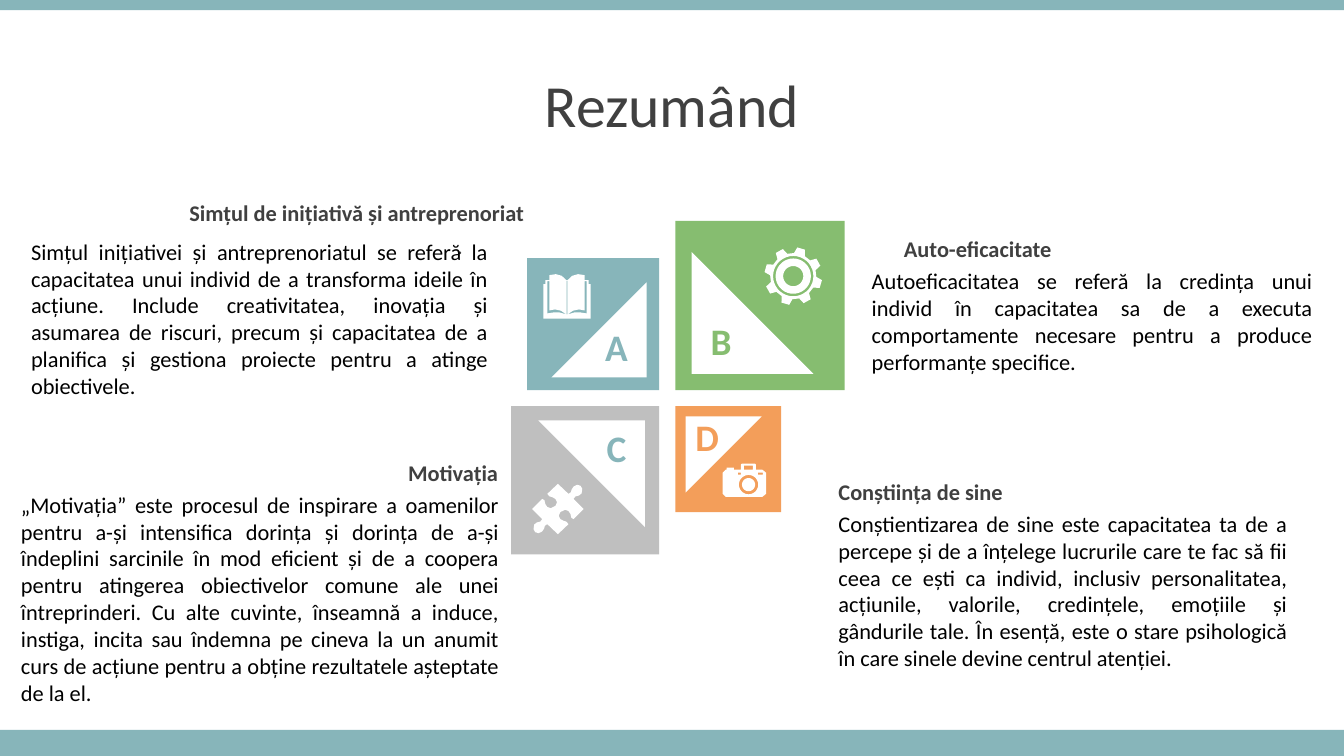
from dataclasses import dataclass
from math import cos, radians, sin

from pptx import Presentation, util as u
from pptx.dml.color import RGBColor
from pptx.enum import shapes, text

# Grid: 160 columns by 90 rows of square cells; every length below is in cells
COLS, ROWS = 160, 90
CELL = u.Emu(76200)
SHAPE, ALIGN = shapes.MSO_SHAPE, text.PP_ALIGN
Point = tuple[float, float]
Contour = list[Point]
Box = tuple[float, float, float, float]


@dataclass(frozen=True)
class Theme:
    font: str = "Calibri"
    teal: str = "87B5BA"
    green: str = "86BD70"
    orange: str = "F39E5A"
    grey: str = "BFBFBF"
    white: str = "FFFFFF"
    black: str = "000000"
    dark: str = "404040"
    title: float = 42.7
    letter: float = 26.7
    body: float = 16


@dataclass(frozen=True)
class Tile:
    letter: str
    size: float
    right: bool
    below: bool
    turn: int
    fill: str
    ink: str
    letter_at: Point


@dataclass(frozen=True)
class Entry:
    heading: str
    heading_box: Box
    align: ALIGN
    body: str
    body_box: Box


@dataclass(frozen=True)
class Icon:
    at: Point
    contours: list[Contour]


T = Theme()
CROSS, GAP = (79.44, 47.4), 1.92
TILES = [
    Tile("A", 15.72, False, False, 270, T.teal, T.teal, (69.84, 38.04)),
    Tile("B", 20.16, True, False, 0, T.green, T.green, (82.32, 37.32)),
    Tile("C", 17.64, False, True, 180, T.grey, T.teal, (69.84, 50.04)),
    Tile("D", 12.6, True, True, 90, T.orange, T.orange, (80.64, 48.72)),
]
ENTRIES = [
    Entry("Simțul de inițiativă și antreprenoriat", (6.6, 23.16, 57, 4.44), ALIGN.RIGHT,
          "Simțul inițiativei și antreprenoriatul se referă la capacitatea unui individ de a "
          "transforma ideile în acțiune. Include creativitatea, inovația și asumarea de riscuri, "
          "precum și capacitatea de a planifica și gestiona proiecte pentru a atinge obiectivele.",
          (2.52, 27.72, 56.76, 20.64)),
    Entry("Auto-eficacitate", (106.44, 27.36, 44.4, 4.44), ALIGN.LEFT,
          "Autoeficacitatea se referă la credința unui individ în capacitatea sa de a executa "
          "comportamente necesare pentru a produce performanțe specifice.",
          (102.6, 31.2, 54.84, 14.16)),
    Entry("Motivația", (16.08, 54.12, 44.4, 4.44), ALIGN.RIGHT,
          "„Motivația” este procesul de inspirare a oamenilor pentru a-și intensifica dorința și "
          "dorința de a-și îndeplini sarcinile în mod eficient și de a coopera pentru atingerea "
          "obiectivelor comune ale unei întreprinderi. Cu alte cuvinte, înseamnă a induce, "
          "instiga, incita sau îndemna pe cineva la un anumit curs de acțiune pentru a obține "
          "rezultatele așteptate de la el.",
          (1.32, 57.84, 59.28, 27.12)),
    Entry("Conștiința de sine", (98.64, 56.28, 44.4, 4.44), ALIGN.LEFT,
          "Conștientizarea de sine este capacitatea ta de a percepe și de a înțelege lucrurile "
          "care te fac să fii ceea ce ești ca individ, inclusiv personalitatea, acțiunile, "
          "valorile, credințele, emoțiile și gândurile tale. În esență, este o stare psihologică "
          "în care sinele devine centrul atenției.",
          (98.64, 60.12, 55.8, 20.64)),
]


# Icon outlines, relative to each icon's own anchor
def polar(radius: float, degrees: float) -> Point:
    return radius * cos(radians(degrees)), radius * sin(radians(degrees))


def circle(cx: float, cy: float, radius: float) -> Contour:
    return [(cx + x, cy + y) for x, y in (polar(radius, a) for a in range(0, 360, 10))]


def rect(x1: float, y1: float, x2: float, y2: float) -> Contour:
    return [(x1, y1), (x2, y1), (x2, y2), (x1, y2)]


def mirror(points: Contour, width: float) -> Contour:
    return [(width - x, y) for x, y in reversed(points)]


def book() -> list[Contour]:
    width = 5.64
    half = [(0, 5.28), (0, 1.2), (0.24, 1.2), (0.24, 0.72), (0.72, 0.72), (0.72, 0.12),
            (1.5, 0), (2.2, 0.2), (2.82, 0.78)]
    page = [(0.48, 0.84), (0.72, 0.84), (0.72, 4.32), (1.4, 4.2), (2.1, 4.35),
            (2.76, 4.8), (1.9, 4.55), (1.2, 4.56), (0.48, 4.68)]
    return [half + mirror(half, width), page, mirror(page, width), rect(2.78, 0.8, 2.86, 4.8)]


def gear() -> list[Contour]:
    tooth = [(2.75, -14), (3.45, -8), (3.45, 8), (2.75, 14)]
    rim = [polar(r, 16 + turn + a) for turn in range(0, 360, 45) for r, a in tooth]
    return [rim] + [circle(0, 0, r) for r in (2.4, 2.1, 1.2)]


def puzzle() -> list[Contour]:
    half = [(0, -3), (1.26, -1.8), (1.55, -2), (1.65, -2.35), (1.9, -2.7), (2.3, -2.88),
            (2.7, -2.76), (2.9, -2.4), (2.82, -1.85), (2.5, -1.6), (2.1, -1.5), (1.86, -1.2),
            (3.06, 0), (1.86, 1.2), (1.6, 1.05), (1.5, 0.6), (1.26, 0.24), (0.85, 0.1),
            (0.3, 0.36), (0.1, 0.8), (0.3, 1.2), (0.7, 1.42), (1, 1.5), (1.26, 1.8)]
    return [half + [(-x, -y) for x, y in half]]


def camera() -> list[Contour]:
    case = [(0, 1.08), (0.36, 0.72), (0.48, 0.72), (0.48, 0.48), (1.32, 0.48), (1.32, 0.72),
            (2.16, 0.72), (2.16, 0.1), (2.3, 0), (3.84, 0), (3.96, 0.1), (3.96, 0.72),
            (4.72, 0.72), (5.16, 1.08), (5.16, 3.6), (4.72, 3.96), (0.36, 3.96), (0, 3.6)]
    return [case, circle(3.08, 2.5, 1.15), circle(3.08, 2.5, 0.78), rect(1.8, 1.08, 2.16, 1.32),
            rect(4.2, 1.08, 4.8, 1.32), rect(2.52, 0.24, 3.6, 0.72)]


ICONS = [Icon((64.68, 32.64), book()), Icon((94.44, 32.88), gear()),
         Icon((66.42, 60.6), puzzle()), Icon((86.04, 55.2), camera())]


# Drawing functions
def emu(cells: float) -> u.Emu:
    return u.Emu(round(cells * CELL))


def paint(sp, colour: str) -> None:
    sp.fill.solid()
    sp.fill.fore_color.rgb = RGBColor.from_string(colour)
    sp.line.fill.background()
    sp.shadow.inherit = False


def add_block(s, kind: SHAPE, box: Box, colour: str, turn: int = 0) -> None:
    sp = s.shapes.add_shape(kind, *map(emu, box))
    sp.rotation = turn
    paint(sp, colour)


def write(sp, words: str, size: float, colour: str, align: ALIGN, bold: bool = False):
    tf = sp.text_frame
    tf.text = words
    tf.word_wrap = True
    p = tf.paragraphs[0]
    p.alignment = align
    font = p.runs[0].font
    font.name, font.size, font.bold = T.font, u.Pt(size), bold
    font.color.rgb = RGBColor.from_string(colour)
    return p


def add_text(s, box: Box, *style) -> None:
    write(s.shapes.add_textbox(*map(emu, box)), *style)


def add_tile(s, tile: Tile) -> None:
    def place(size: float, inset: float) -> Box:
        x = CROSS[0] + inset if tile.right else CROSS[0] - inset - size
        y = CROSS[1] + inset if tile.below else CROSS[1] - inset - size
        return x, y, size, size

    add_block(s, SHAPE.RECTANGLE, place(tile.size, GAP / 2), tile.fill)
    triangle = place(0.72 * tile.size, GAP / 2 + 0.096 * tile.size)
    add_block(s, SHAPE.RIGHT_TRIANGLE, triangle, T.white, tile.turn)
    add_text(s, (*tile.letter_at, 7.08, 6.6), tile.letter, T.letter, tile.ink, ALIGN.CENTER, True)


def add_icon(s, icon: Icon) -> None:
    (ax, ay), builder = icon.at, None
    for contour in icon.contours:
        start, *rest = [(emu(ax + x), emu(ay + y)) for x, y in contour]
        if builder is None:
            builder = s.shapes.build_freeform(*start)
        else:
            builder.move_to(*start)
        builder.add_line_segments(rest, close=True)
    paint(builder.convert_to_shape(), T.white)


def main() -> None:
    prs = Presentation()
    prs.slide_width, prs.slide_height = emu(COLS), emu(ROWS)
    s = prs.slides.add_slide(prs.slide_layouts[5])

    # Bands and title
    add_block(s, SHAPE.RECTANGLE, (0, 86.88, COLS, 3.12), T.teal)
    add_block(s, SHAPE.RECTANGLE, (0, 0, COLS, 1.2), T.teal)
    title = s.shapes.title
    title.left, title.top, title.width, title.height = map(emu, (0, 7.8, COLS, 10.08))
    p = write(title, "Rezumând", T.title, T.dark, ALIGN.CENTER)
    p.line_spacing, p.space_before = 0.9, u.Pt(10)
    title.text_frame.vertical_anchor = text.MSO_ANCHOR.MIDDLE
    title.text_frame.auto_size = text.MSO_AUTO_SIZE.NONE

    # Lettered tiles and their icons
    for tile in TILES:
        add_tile(s, tile)
    for icon in ICONS:
        add_icon(s, icon)

    # Explanations
    add_text(s, (11.88, 27, 44.4, 4.44), ".", T.body, T.dark, ALIGN.RIGHT)
    for e in ENTRIES:
        add_text(s, e.heading_box, e.heading, T.body, T.dark, e.align, True)
        add_text(s, e.body_box, e.body, T.body, T.black, ALIGN.JUSTIFY)
    prs.save("out.pptx")


if __name__ == "__main__":
    main()
